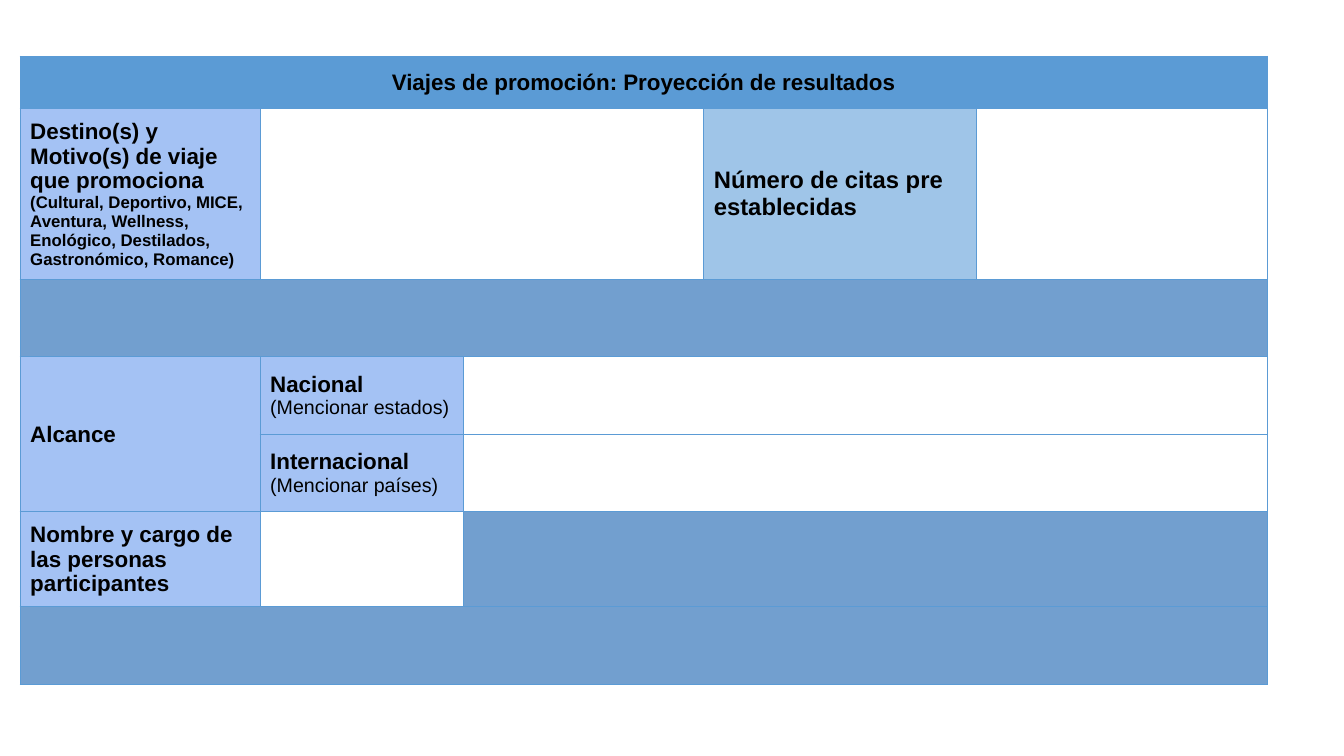
import pptx
import pptx.util
import pptx.dml.color
import pptx.enum.text
import lxml.etree

Inches, Pt = pptx.util.Inches, pptx.util.Pt
RGBColor = pptx.dml.color.RGBColor
BLACK = RGBColor(0x00, 0x00, 0x00)
WHITE = RGBColor(0xFF, 0xFF, 0xFF)
HEADER = RGBColor(0x5B, 0x9B, 0xD5)
LABEL = RGBColor(0xA4, 0xC2, 0xF4)
CITAS = RGBColor(0x9F, 0xC5, 0xE8)
BAND = RGBColor(0x72, 0x9F, 0xCF)

COLUMNS = [2.38, 2.02, 2.38, 2.71, 2.88]
ROWS = [0.52, 1.69, 0.77, 0.77, 0.77, 0.93, 0.77]

# Each cell: row, column, rows spanned, columns spanned, fill, paragraphs of (text, size, bold)
CELLS = [
    (0, 0, 1, 5, HEADER, [[("Viajes de promoción: Proyección de resultados", 16, True)]]),
    (1, 0, 1, 1, LABEL, [
        [("Destino(s) y Motivo(s) de viaje que promociona", 16, True)],
        [("(Cultural, Deportivo, MICE, Aventura, Wellness, Enológico, "
          "Destilados, Gastronómico, Romance)", 12, True)]]),
    (1, 1, 1, 2, WHITE, []),
    (1, 3, 1, 1, CITAS, [[("Número de citas pre establecidas", 17, True)]]),
    (1, 4, 1, 1, WHITE, []),
    (2, 0, 1, 5, BAND, []),
    (3, 0, 2, 1, LABEL, [[("Alcance", 16, True)]]),
    (3, 1, 1, 1, LABEL, [[("Nacional ", 16, True), ("(Mencionar estados)", 14, False)]]),
    (3, 2, 1, 3, WHITE, []),
    (4, 1, 1, 1, LABEL, [[("Internacional ", 16, True), ("(Mencionar países)", 14, False)]]),
    (4, 2, 1, 3, WHITE, []),
    (5, 0, 1, 1, LABEL, [[("Nombre y cargo de las personas participantes", 16, True)]]),
    (5, 1, 1, 1, WHITE, []),
    (5, 2, 1, 3, BAND, []),
    (6, 0, 1, 5, BAND, []),
]

deck = pptx.Presentation()
deck.slide_width, deck.slide_height = Inches(13.33), Inches(7.5)
page = deck.slides.add_slide(deck.slide_layouts[6])

# Table grid
table = page.shapes.add_table(
    len(ROWS), len(COLUMNS), Inches(0.2), Inches(0.56),
    Inches(sum(COLUMNS)), Inches(sum(ROWS))).table
table.first_row = table.horz_banding = False
for column, width in zip(table.columns, COLUMNS):
    column.width = Inches(width)
for row, height in zip(table.rows, ROWS):
    row.height = Inches(height)

# Thin blue borders
namespace = pptx.oxml.ns.nsdecls("a")
for cell in table.iter_cells():
    properties = cell._tc.get_or_add_tcPr()
    for side in "LRTB":
        properties.append(lxml.etree.fromstring(
            f'<a:ln{side} {namespace} w="{Pt(0.75)}"><a:solidFill>'
            f'<a:srgbClr val="{HEADER}"/></a:solidFill></a:ln{side}>',
            pptx.oxml.oxml_parser))

# Merges, fills and text
for top, left, tall, wide, color, paragraphs in CELLS:
    cell = table.cell(top, left)
    if tall * wide > 1:
        cell.merge(table.cell(top + tall - 1, left + wide - 1))
    for r in range(top, top + tall):
        for c in range(left, left + wide):
            table.cell(r, c).fill.solid()
            table.cell(r, c).fill.fore_color.rgb = color
    cell.vertical_anchor = pptx.enum.text.MSO_ANCHOR.MIDDLE
    for side in ("left", "right", "top", "bottom"):
        setattr(cell, f"margin_{side}", Inches(0.1))
    frame = cell.text_frame
    for index, spans in enumerate(paragraphs):
        para = frame.add_paragraph() if index else frame.paragraphs[0]
        if color == HEADER:
            para.alignment = pptx.enum.text.PP_ALIGN.CENTER
        for text, size, bold in spans:
            span = para.add_run()
            span.text = text
            span.font.color.rgb = BLACK
            for name, value in {"name": "Arial", "size": Pt(size), "bold": bold}.items():
                setattr(span.font, name, value)

deck.save("out.pptx")
